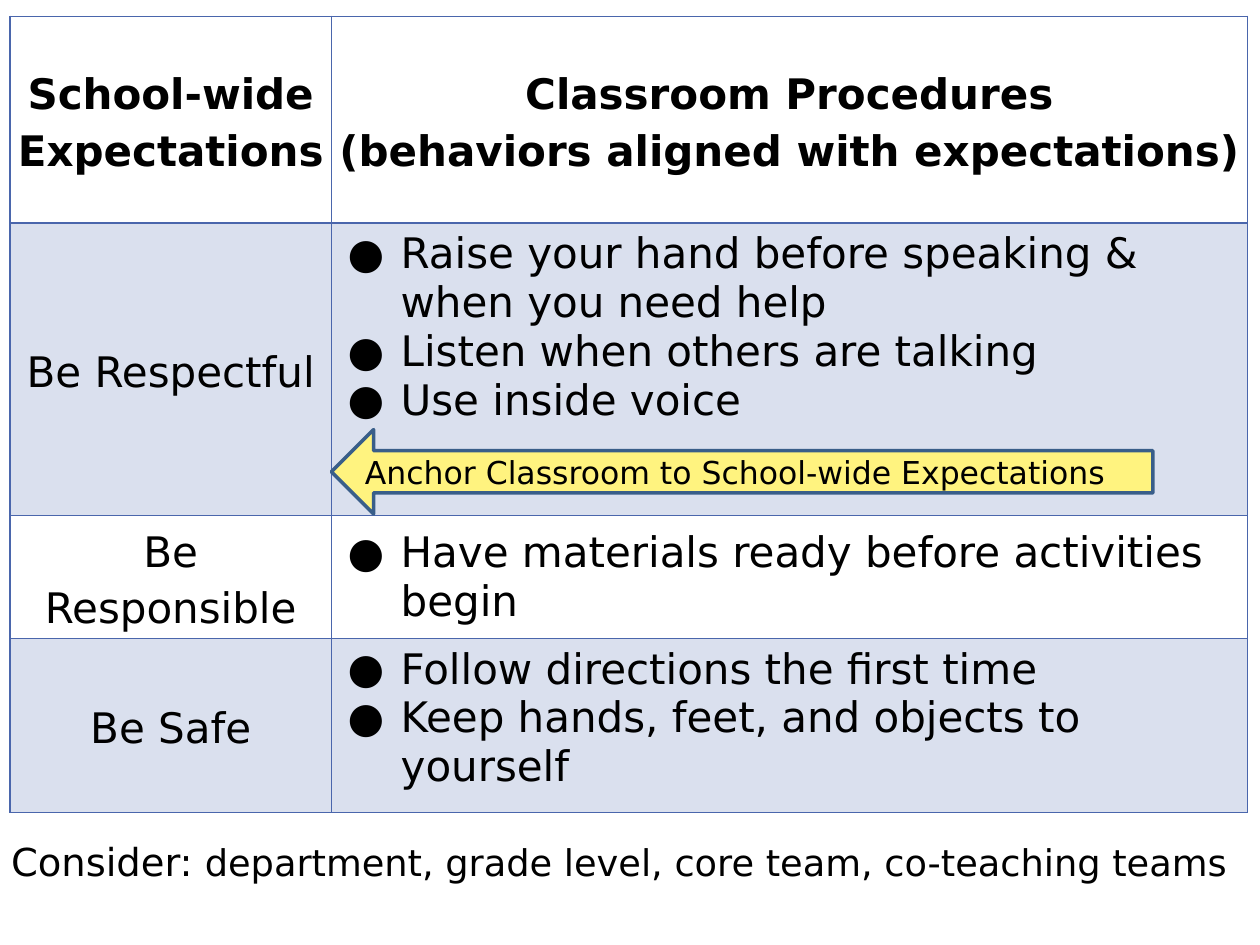
from lxml.etree import SubElement as Sub
from pptx import Presentation
from pptx.dml.color import RGBColor as Color
from pptx.enum.shapes import MSO_SHAPE as Preset
from pptx.enum.text import MSO_ANCHOR as Anchor, PP_ALIGN as Align
from pptx.oxml.ns import qn
from pptx.util import Pt

PX = 9144  # EMU per px, 100 px to the inch
FONT = "DejaVu Sans"
COLORS = {
    "text": "000000",
    "paper": "FFFFFF",
    "grid": "4A66AC",
    "arrow": "FFF37F",
    "arrow_line": "395E89",
}

# Table content: heading lines, then expectation and its procedures
HEADINGS = (
    "School-wide Expectations",
    ("Classroom Procedures", "(behaviors aligned with expectations)"),
)
EXPECTATIONS = [
    ("Be Respectful", (
        "Raise your hand before speaking & when you need help",
        "Listen when others are talking",
        "Use inside voice",
    )),
    ("Be Responsible", ("Have materials ready before activities begin",)),
    ("Be Safe", (
        "Follow directions the first time",
        "Keep hands, feet, and objects to yourself",
    )),
]
COLUMN_WIDTHS = (255, 727)
ROW_HEIGHTS = (164, 232, 98, 138)

LABEL_CELL = {"margin_left": 3 * PX, "margin_right": 3 * PX,
              "margin_top": 0, "margin_bottom": 0,
              "vertical_anchor": Anchor.MIDDLE}
LIST_CELL = {"margin_left": 5 * PX, "margin_right": 5 * PX,
             "margin_top": 5 * PX, "margin_bottom": 5 * PX}
LABEL_PARAGRAPH = {"alignment": Align.CENTER, "line_spacing": 1.15}
LIST_PARAGRAPH = {"alignment": Align.LEFT}


def color(name):
    return Color.from_string(COLORS[name])


def apply(target, formats):
    for name, value in formats.items():
        setattr(target, name, value)


def add_run(paragraph, text, size, bold=False):
    run = paragraph.add_run()
    run.text = text
    apply(run.font, {"name": FONT, "size": Pt(size), "bold": bold})
    run.font.color.rgb = color("text")


def add_bullet(paragraph):
    properties = paragraph._p.get_or_add_pPr()
    properties.set("marL", str(50 * PX))
    properties.set("indent", str(-42 * PX))
    bullet_color = Sub(properties, qn("a:buClr"))
    Sub(bullet_color, qn("a:srgbClr"), val=COLORS["text"])
    Sub(properties, qn("a:buFont"), typeface=FONT)
    Sub(properties, qn("a:buChar"), char="●")


def style_cell(cell, shaded):
    # Borders come before the fill in the cell properties
    properties = cell._tc.get_or_add_tcPr()
    for side in ("lnL", "lnR", "lnT", "lnB"):
        border = Sub(properties, qn(f"a:{side}"), w=str(Pt(1)))
        line_fill = Sub(border, qn("a:solidFill"))
        Sub(line_fill, qn("a:srgbClr"), val=COLORS["grid"])
    if shaded:
        cell_fill = Sub(properties, qn("a:solidFill"))
        tint = Sub(cell_fill, qn("a:srgbClr"), val=COLORS["grid"])
        Sub(tint, qn("a:alpha"), val="20000")
    else:
        Sub(properties, qn("a:noFill"))


def fill_cell(cell, lines, formats, paragraph_formats, bold=False, bullets=False):
    apply(cell, formats)
    frame = cell.text_frame
    for index, line in enumerate(lines):
        paragraph = frame.add_paragraph() if index else frame.paragraphs[0]
        apply(paragraph, paragraph_formats)
        if bullets:
            add_bullet(paragraph)
        add_run(paragraph, line, 24, bold)


def add_expectations_table(slide):
    frame = slide.shapes.add_table(
        len(ROW_HEIGHTS), len(COLUMN_WIDTHS), 8 * PX, 13 * PX,
        sum(COLUMN_WIDTHS) * PX, sum(ROW_HEIGHTS) * PX)
    table = frame.table
    apply(table, {"first_row": False, "horz_banding": False})
    for column, width in zip(table.columns, COLUMN_WIDTHS):
        column.width = width * PX
    for row, height in zip(table.rows, ROW_HEIGHTS):
        row.height = height * PX

    # Heading row
    label, procedures = HEADINGS
    fill_cell(table.cell(0, 0), [label], LABEL_CELL, LABEL_PARAGRAPH, bold=True)
    fill_cell(table.cell(0, 1), procedures, LABEL_CELL, LABEL_PARAGRAPH, bold=True)

    # One row for each expectation
    for row, (label, procedures) in enumerate(EXPECTATIONS, start=1):
        fill_cell(table.cell(row, 0), [label], LABEL_CELL, LABEL_PARAGRAPH)
        fill_cell(table.cell(row, 1), procedures, LIST_CELL, LIST_PARAGRAPH,
                  bullets=True)
    table.cell(2, 1).vertical_anchor = Anchor.MIDDLE

    # Every second row is tinted
    for row in range(len(ROW_HEIGHTS)):
        for column in range(len(COLUMN_WIDTHS)):
            style_cell(table.cell(row, column), shaded=row % 2 == 1)


def add_box(slide, preset, place, fill, line, runs, anchor):
    shape = slide.shapes.add_shape(preset, *(length * PX for length in place))
    shape.shadow.inherit = False
    shape.fill.solid()
    shape.fill.fore_color.rgb = color(fill)
    if line:
        shape.line.color.rgb = color(line)
        shape.line.width = Pt(2)
    else:
        shape.line.fill.background()
    apply(shape.text_frame, {
        "word_wrap": True, "vertical_anchor": anchor,
        "margin_left": 10 * PX, "margin_right": 10 * PX,
        "margin_top": 5 * PX, "margin_bottom": 5 * PX})
    paragraph = shape.text_frame.paragraphs[0]
    paragraph.alignment = Align.LEFT
    for text, size in runs:
        add_run(paragraph, text, size)


def main():
    presentation = Presentation()
    apply(presentation, {"slide_width": 1000 * PX, "slide_height": 750 * PX})
    slide = presentation.slides.add_slide(presentation.slide_layouts[6])

    add_expectations_table(slide)

    # Arrow from the procedures back to the expectations
    add_box(slide, Preset.LEFT_ARROW, (263, 341, 652, 67), "arrow", "arrow_line",
            [("Anchor Classroom to School-wide Expectations", 18)], Anchor.MIDDLE)

    # Closing note
    add_box(slide, Preset.RECTANGLE, (-1, 660, 1000, 73), "paper", None,
            [("Consider: ", 22),
             ("department, grade level, core team, co-teaching teams", 21)],
            Anchor.TOP)

    presentation.save("out.pptx")


if __name__ == "__main__":
    main()
